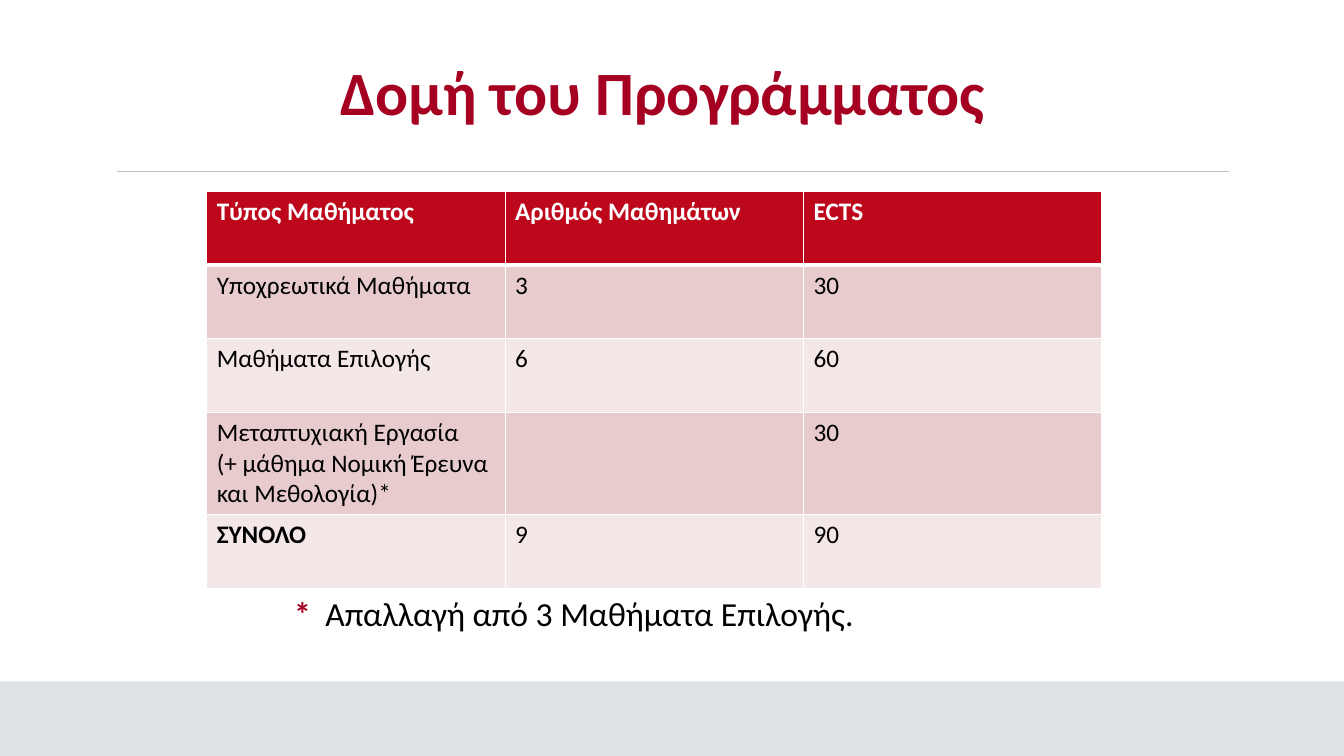
from lxml.etree import SubElement
from pptx import Presentation
from pptx.dml.color import RGBColor
from pptx.enum.shapes import MSO_CONNECTOR, MSO_SHAPE
from pptx.enum.text import MSO_ANCHOR, PP_ALIGN
from pptx.oxml.ns import qn
from pptx.util import Inches, Pt

WHITE = RGBColor(0xFF, 0xFF, 0xFF)
BLACK = RGBColor(0x00, 0x00, 0x00)
CRIMSON = RGBColor(0xA5, 0x00, 0x21)
HEADER_RED = RGBColor(0xBD, 0x08, 0x1C)
BAND_DARK = RGBColor(0xE8, 0xCC, 0xCD)
BAND_LIGHT = RGBColor(0xF4, 0xE7, 0xE8)
FOOTER_GREY = RGBColor(0xDF, 0xE2, 0xE5)
RULE_GREY = RGBColor(0xBF, 0xBF, 0xBF)

SLIDE_WIDTH, SLIDE_HEIGHT = 13.33, 7.5
ROW_HEIGHT = 0.73
LINE_HEIGHT = 0.3
FONT_NAME = "Calibri"

COURSES = [
    ["Τύπος Μαθήματος", "Αριθμός Μαθημάτων", "ECTS"],
    ["Υποχρεωτικά Μαθήματα", "3", "30"],
    ["Μαθήματα Επιλογής", "6", "60"],
    ["Μεταπτυχιακή Εργασία\n(+ μάθημα Νομική Έρευνα και Μεθολογία)*", "", "30"],
    ["ΣΥΝΟΛΟ", "9", "90"],
]


def style_font(font, size, color, bold=False):
    font.name = FONT_NAME
    font.size = Pt(size)
    font.bold = bold
    font.color.rgb = color


def add_footer_band(page, box):
    band = page.shapes.add_shape(MSO_SHAPE.RECTANGLE, *map(Inches, box))
    band.shadow.inherit = False
    band.fill.solid()
    band.fill.fore_color.rgb = FOOTER_GREY
    band.line.fill.background()


def add_rule(page, left, right, top):
    rule = page.shapes.add_connector(
        MSO_CONNECTOR.STRAIGHT, *map(Inches, (left, top, right, top)))
    rule.line.color.rgb = RULE_GREY
    rule.line.width = Pt(0.5)
    SubElement(rule._element.spPr, qn("a:effectLst"))


def fill_title(page, box, text):
    title = page.shapes.title
    title.left, title.top, title.width, title.height = map(Inches, box)
    frame = title.text_frame
    frame.word_wrap = True
    frame.vertical_anchor = MSO_ANCHOR.TOP
    frame.margin_right = Inches(0.24)
    frame.text = text
    para = frame.paragraphs[0]
    para.alignment = PP_ALIGN.CENTER
    para.line_spacing = 0.9
    style_font(para.font, 44, CRIMSON, bold=True)


def set_cell_borders(cell, is_header, is_below_header):
    widths = {"lnL": 1, "lnR": 1,
              "lnT": 3 if is_below_header else 1,
              "lnB": 3 if is_header else 1}
    properties = cell._tc.get_or_add_tcPr()
    for side, width in widths.items():
        border = SubElement(properties, qn(f"a:{side}"), w=str(Pt(width)))
        fill = SubElement(border, qn("a:solidFill"))
        SubElement(fill, qn("a:srgbClr"), val=str(WHITE))


def add_course_table(page, box):
    table = page.shapes.add_table(
        len(COURSES), len(COURSES[0]), *map(Inches, box)).table
    for row_index, texts in enumerate(COURSES):
        is_header = row_index == 0
        if is_header:
            fill_color = HEADER_RED
        else:
            fill_color = BAND_DARK if row_index % 2 else BAND_LIGHT
        has_break = "\n" in texts[0]
        height = 0.1 + 3 * LINE_HEIGHT if has_break else ROW_HEIGHT
        table.rows[row_index].height = Inches(height)
        for column_index, text in enumerate(texts):
            cell = table.cell(row_index, column_index)
            cell.text = text
            set_cell_borders(cell, is_header, row_index == 1)
            cell.fill.solid()
            cell.fill.fore_color.rgb = fill_color
            for para in cell.text_frame.paragraphs:
                style_font(para.font, 18, WHITE if is_header else BLACK,
                           bold=is_header or text == "ΣΥΝΟΛΟ")


def add_footnote(page, box, mark, text):
    frame = page.shapes.add_textbox(*map(Inches, box)).text_frame
    frame.word_wrap = True
    frame.vertical_anchor = MSO_ANCHOR.BOTTOM
    para = frame.paragraphs[0]
    tabs = SubElement(para._p.get_or_add_pPr(), qn("a:tabLst"))
    SubElement(tabs, qn("a:tab"), pos=str(Inches(0.31)), algn="l")
    for words, color, bold in ((mark, CRIMSON, True), ("\t" + text, BLACK, False)):
        span = para.add_run()
        span.text = words
        style_font(span.font, 24, color, bold)


def build_structure_slide(deck):
    page = deck.slides.add_slide(deck.slide_layouts[5])
    add_footer_band(page, (0, 6.76, SLIDE_WIDTH, SLIDE_HEIGHT - 6.76))
    add_rule(page, 1.16, 12.19, 1.7)
    fill_title(page, (1.13, 0.57, 11.03, 0.66), "Δομή του Προγράμματος")
    add_course_table(page, (2.05, 1.9, 8.88, 3.91))
    add_footnote(page, (2.82, 5.42, 6.67, 0.91),
                 "*", "Απαλλαγή από 3 Μαθήματα Επιλογής.")


def main():
    deck = Presentation()
    deck.slide_width = Inches(SLIDE_WIDTH)
    deck.slide_height = Inches(SLIDE_HEIGHT)
    build_structure_slide(deck)
    deck.save("out.pptx")


if __name__ == "__main__":
    main()
